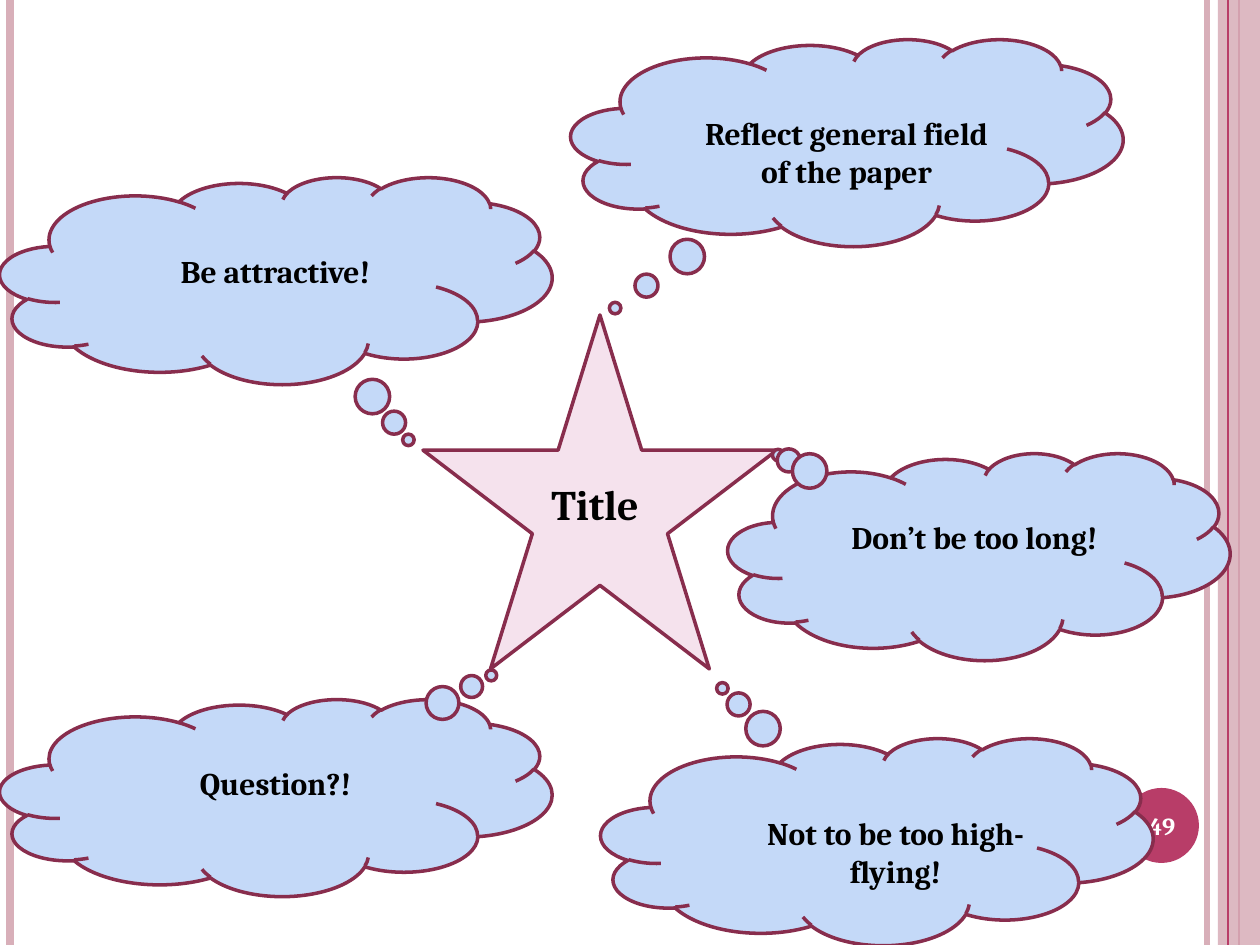
from pptx import Presentation
from pptx.dml.color import RGBColor
from pptx.enum.shapes import MSO_CONNECTOR, MSO_SHAPE
from pptx.enum.text import MSO_ANCHOR, PP_ALIGN
from pptx.oxml.ns import qn
from pptx.util import Pt
from lxml import etree

PX = 914400 / 126
WIDTH, HEIGHT = 1260, 945
STRAIGHT = MSO_CONNECTOR.STRAIGHT
RECTANGLE, ELLIPSE = MSO_SHAPE.RECTANGLE, MSO_SHAPE.OVAL
STAR, CLOUD = MSO_SHAPE.STAR_5_POINT, MSO_SHAPE.CLOUD_CALLOUT
CENTER = PP_ALIGN.CENTER
TOP, MIDDLE = MSO_ANCHOR.TOP, MSO_ANCHOR.MIDDLE

DUSTY_PINK = RGBColor(0xD8, 0xAF, 0xB9)
CRIMSON = RGBColor(0xB8, 0x3D, 0x68)
PALE_PINK = RGBColor(0xF5, 0xE2, 0xED)
PALE_BLUE = RGBColor(0xC4, 0xD9, 0xF8)
MAROON = RGBColor(0x88, 0x2D, 0x4D)
BLACK = RGBColor(0x00, 0x00, 0x00)
WHITE = RGBColor(0xFF, 0xFF, 0xFF)

presentation = Presentation()
presentation.slide_width = round(WIDTH * PX)
presentation.slide_height = round(HEIGHT * PX)
slide = presentation.slides.add_slide(presentation.slide_layouts[6])


def add_shape(kind, box, fill, outline=None):
    shape = slide.shapes.add_shape(kind, *(round(value * PX) for value in box))
    shape.shadow.inherit = False
    shape.fill.solid()
    shape.fill.fore_color.rgb = fill
    if outline is None:
        shape.line.fill.background()
    else:
        shape.line.color.rgb = outline
        shape.line.width = Pt(2)
    return shape


def add_text(box, text, size, color=BLACK, anchor=TOP):
    text_box = slide.shapes.add_textbox(*(round(value * PX) for value in box))
    frame = text_box.text_frame
    frame.word_wrap = True
    frame.vertical_anchor = anchor
    paragraph = frame.paragraphs[0]
    paragraph.text = text
    paragraph.alignment = CENTER
    paragraph.font.name = "Cambria"
    paragraph.font.size = Pt(size)
    paragraph.font.bold = True
    paragraph.font.color.rgb = color


# Vertical border lines, with the translucent band in front of the first three
for x, color, weight in [
    (1207, DUSTY_PINK, 3),
    (10, DUSTY_PINK, 4.5),
    (1239, CRIMSON, 1.5),
    (1228, CRIMSON, 0.75),
]:
    if x == 1228:
        band = add_shape(RECTANGLE, (1218, 0, 42, HEIGHT), DUSTY_PINK)
        band_color = band._element.spPr.find(".//" + qn("a:srgbClr"))
        etree.SubElement(band_color, qn("a:alpha"), val="87000")
    line = slide.shapes.add_connector(
        STRAIGHT, round(x * PX), 0, round(x * PX), round(HEIGHT * PX))
    line.line.color.rgb = color
    line.line.width = Pt(weight)
    etree.SubElement(line._element.spPr, qn("a:effectLst"))

# Page number
add_shape(ELLIPSE, (1124, 788, 75, 75), CRIMSON)
add_text((1120, 790, 84, 72), "49", 14, WHITE, MIDDLE)

# Central star
add_shape(STAR, (423, 315, 354, 354), PALE_PINK, MAROON)
add_text((511, 472, 168, 102), "Title", 24)

# Thought clouds: cloud box, tail offset, text box, text
clouds = [
    ((571, 39, 552, 207), (-0.42, 0.8), (679, 108, 335, 89),
     "Reflect general field of the paper"),
    ((601, 738, 552, 207), (-0.28, -0.74), (728, 808, 335, 89),
     "Not to be too high- flying!"),
    ((728, 453, 502, 207), (-0.4, -0.49), (807, 512, 335, 50),
     "Don’t be too long!"),
    ((0, 177, 552, 207), (0.24, 0.77), (108, 246, 335, 50),
     "Be attractive!"),
    ((0, 699, 552, 197), (0.39, -0.62), (108, 758, 335, 50),
     "Question?!"),
]
for cloud_box, tail, text_box, text in clouds:
    cloud = add_shape(CLOUD, cloud_box, PALE_BLUE, MAROON)
    cloud.adjustments[0], cloud.adjustments[1] = tail
    add_text(text_box, text, 18)

presentation.save("out.pptx")
